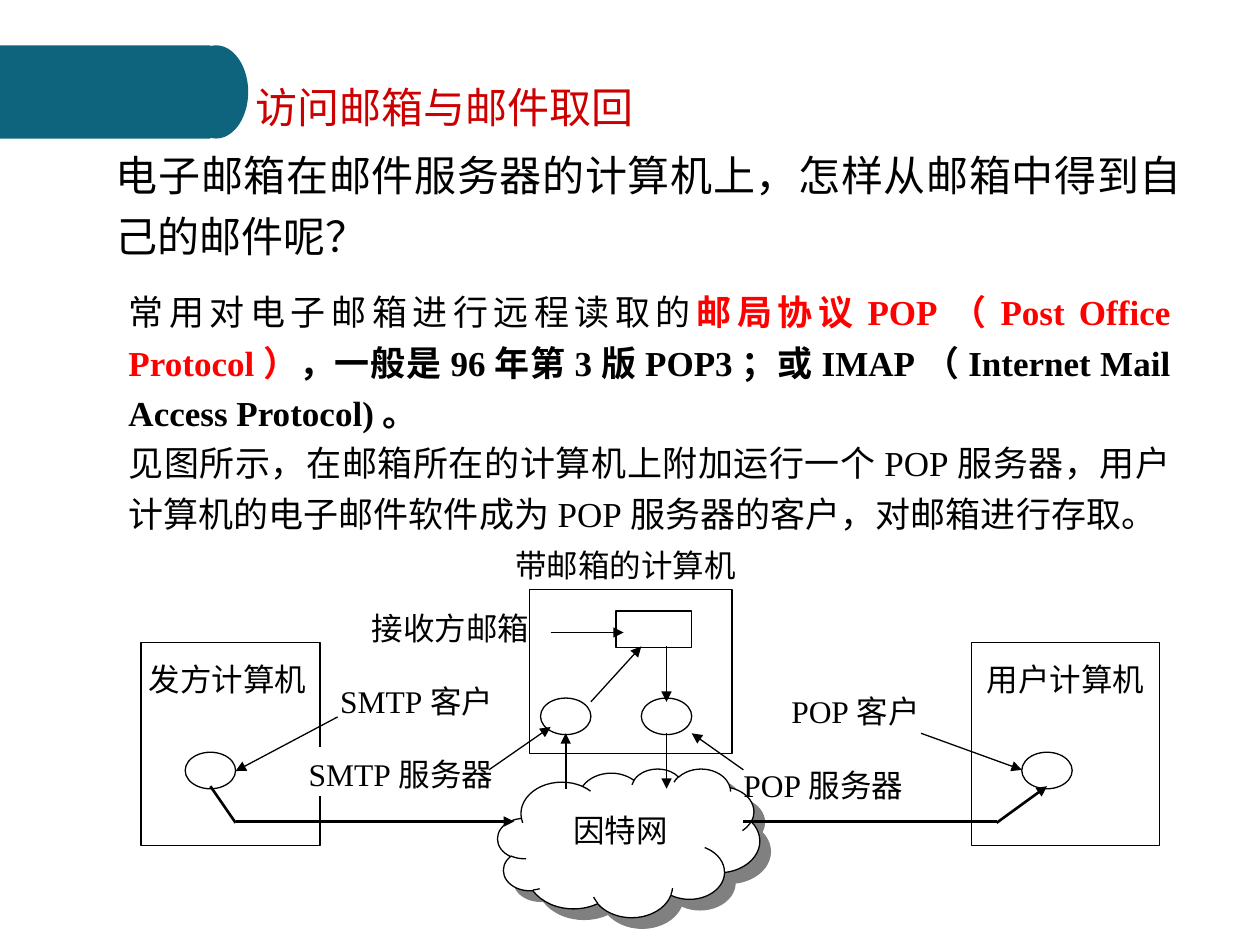
import pptx
import pptx.dml.color
import pptx.enum.shapes
import pptx.enum.text
import pptx.oxml
import pptx.util
from dataclasses import dataclass

Inches = pptx.util.Inches
Pt = pptx.util.Pt
RGB = pptx.dml.color.RGBColor.from_string
Kind = pptx.enum.shapes.MSO_SHAPE
Align = pptx.enum.text.PP_ALIGN
NS = 'xmlns:a="http://schemas.openxmlformats.org/drawingml/2006/main"'


@dataclass
class Theme:
    font: str = "Times New Roman"
    teal: str = "0E647C"
    black: str = "000000"
    white: str = "FFFFFF"
    title: str = "CC0000"
    red: str = "FF0000"
    gray: str = "808080"
    big: int = 24
    mid: int = 20
    small: int = 18


theme = Theme()
deck = pptx.Presentation()
deck.slide_width, deck.slide_height = Inches(10), Inches(7.5)
slide = deck.slides.add_slide(deck.slide_layouts[6])


def draw(kind, box, fill=theme.white, line=theme.black):
    shape = slide.shapes.add_shape(kind, *map(Inches, box))
    shape.shadow.inherit = False
    shape.fill.solid()
    shape.fill.fore_color.rgb = RGB(fill)
    shape.line.color.rgb = RGB(line)
    shape.line.width = Pt(0.75)
    return shape


def write(shape, paras, size, pad, color=theme.black, align=Align.JUSTIFY):
    frame = shape.text_frame
    frame.word_wrap = True
    frame.vertical_anchor = pptx.enum.text.MSO_ANCHOR.TOP
    frame.margin_left, frame.margin_top, frame.margin_right, frame.margin_bottom = map(Inches, pad)
    for i, runs in enumerate(paras):
        para = frame.paragraphs[0] if i == 0 else frame.add_paragraph()
        para.alignment = align
        para.line_spacing = 1.2
        para.font.name = theme.font
        para.font.size = Pt(size)
        para.font.color.rgb = RGB(color)
        for text, tint, bold in runs:
            run = para.add_run()
            run.text = text
            if tint:
                run.font.color.rgb = RGB(tint)
            if bold:
                run.font.bold = True


for kind, box in [
    (Kind.RECTANGLE, (0, 0.36, 1.67, 0.74)),
    (Kind.OVAL, (1.46, 0.36, 0.51, 0.74)),
]:
    draw(kind, box, theme.teal).line.fill.background()

body = [
    [
        ("常用对电子邮箱进行远程读取的", None, False),
        ("邮局协议POP（Post Office Protocol）", theme.red, True),
        ("，一般是96年第3版POP3；或IMAP（Internet Mail Access Protocol)。", None, True),
    ],
    [("见图所示，在邮箱所在的计算机上附加运行一个POP服务器，用户计算机的电子邮件软件成为POP服务器的客户，对邮箱进行存取。", None, False)],
]
title = [[("访问邮箱与邮件取回", None, False)]]
ask = [[("电子邮箱在邮件服务器的计算机上，怎样从邮箱中得到自己的邮件呢？", None, False)]]
wide = (0.1, 0.05, 0.1, 0.05)
for box, paras, size, pad, color, align in [
    ((1.02, 2.24, 8.27, 3.05), body, theme.mid, (0, 0, 0, 0), theme.black, Align.JUSTIFY),
    ((1.93, 0.52, 4, 0.55), title, theme.big, wide, theme.title, Align.LEFT),
    ((0.82, 1.06, 8.66, 1.03), ask, theme.big, wide, theme.black, Align.JUSTIFY),
]:
    write(slide.shapes.add_textbox(*map(Inches, box)), paras, size, pad, color, align)

cloud = draw(Kind.CLOUD, (3.95, 6.1, 2.08, 1.18))
glow = cloud._element.spPr.find(pptx.oxml.ns.qn("a:effectLst"))
glow.append(pptx.oxml.parse_xml(
    f'<a:outerShdw {NS} dist="107950" dir="2700000" algn="ctr" rotWithShape="0">'
    f'<a:srgbClr val="{theme.gray}"/></a:outerShdw>'))

for text, box, left, top, line in [
    ("发方计算机", (1.12, 5.1, 1.42, 1.61), 0.06, 0.08, theme.black),
    ("用户计算机", (7.71, 5.1, 1.49, 1.61), 0.12, 0.08, theme.black),
    ("带邮箱的计算机", (4.03, 4.27, 2, 0.33), 0.06, 0, theme.white),
    ("因特网", (4.49, 6.38, 1.01, 0.29), 0.06, 0, theme.white),
    ("接收方邮箱", (2.95, 4.77, 1.3, 0.38), 0, 0, theme.white),
    ("SMTP服务器", (2.45, 5.93, 1.58, 0.38), 0, 0, theme.white),
    ("POP客户", (6.28, 5.43, 1.22, 0.4), 0, 0, theme.white),
    ("POP服务器", (5.9, 6.02, 1.47, 0.24), 0, 0, theme.white),
    ("SMTP客户", (2.7, 5.35, 1.25, 0.33), 0, 0, theme.white),
]:
    label = draw(Kind.RECTANGLE, box, line=line)
    write(label, [[(text, None, False)]], theme.small, (left, top, 0, 0))

for box in [(4.2, 4.68, 1.61, 1.3), (4.89, 4.85, 0.6, 0.29)]:
    draw(Kind.RECTANGLE, box)

for left, top in [(1.47, 5.97), (8.11, 5.97), (4.29, 5.54), (5.09, 5.54)]:
    draw(Kind.OVAL, (left, top, 0.4, 0.29))

for ends, width, arrow in [
    ((1.87, 6.52, 4.08, 6.52), 1.5, True),
    ((1.67, 6.24, 1.87, 6.53), 1.5, False),
    ((5.9, 6.52, 7.91, 6.52), 1.5, False),
    ((7.91, 6.53, 8.31, 6.24), 1.5, True),
    ((2.68, 5.69, 1.87, 6.12), 0.75, True),
    ((7.31, 5.82, 8.11, 6.11), 0.75, True),
    ((4.49, 6.26, 4.49, 5.82), 1, True),
    ((5.29, 5.82, 5.29, 6.26), 0.75, True),
    ((5.29, 5.13, 5.29, 5.57), 0.75, True),
    ((4.69, 5.57, 5.09, 5.13), 0.75, True),
    ((5.9, 6.11, 5.49, 5.82), 0.75, True),
    ((3.88, 6.11, 4.37, 5.77), 0.75, True),
    ((4.37, 5.02, 4.95, 5.02), 0.75, True),
]:
    link = slide.shapes.add_connector(
        pptx.enum.shapes.MSO_CONNECTOR.STRAIGHT, *map(Inches, ends))
    link.line.color.rgb = RGB(theme.black)
    link.line.width = Pt(width)
    if arrow:
        link.line._get_or_add_ln().append(
            pptx.oxml.parse_xml(f'<a:tailEnd {NS} type="triangle"/>'))
    link._element.spPr.append(pptx.oxml.parse_xml(f"<a:effectLst {NS}/>"))

deck.save("out.pptx")
